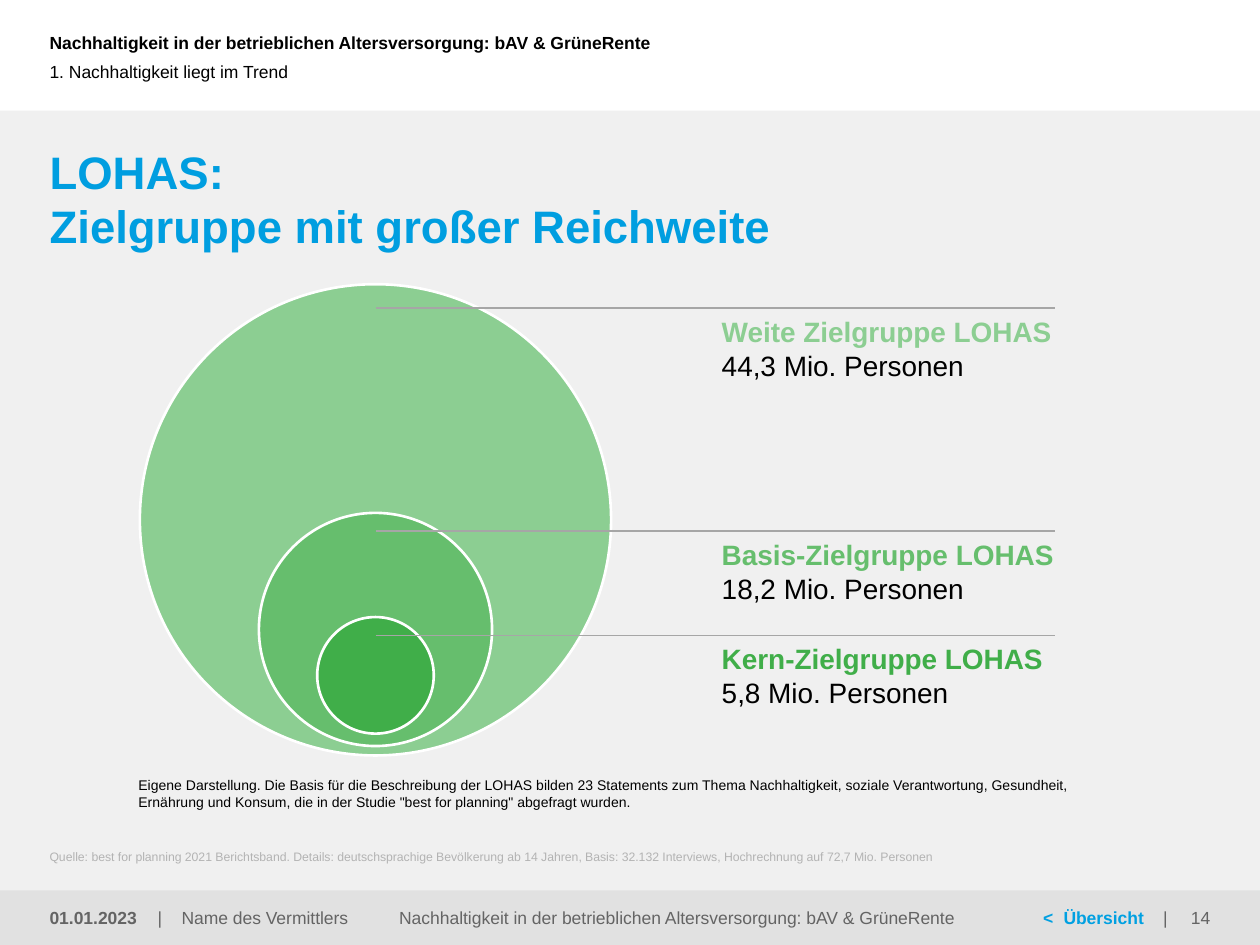
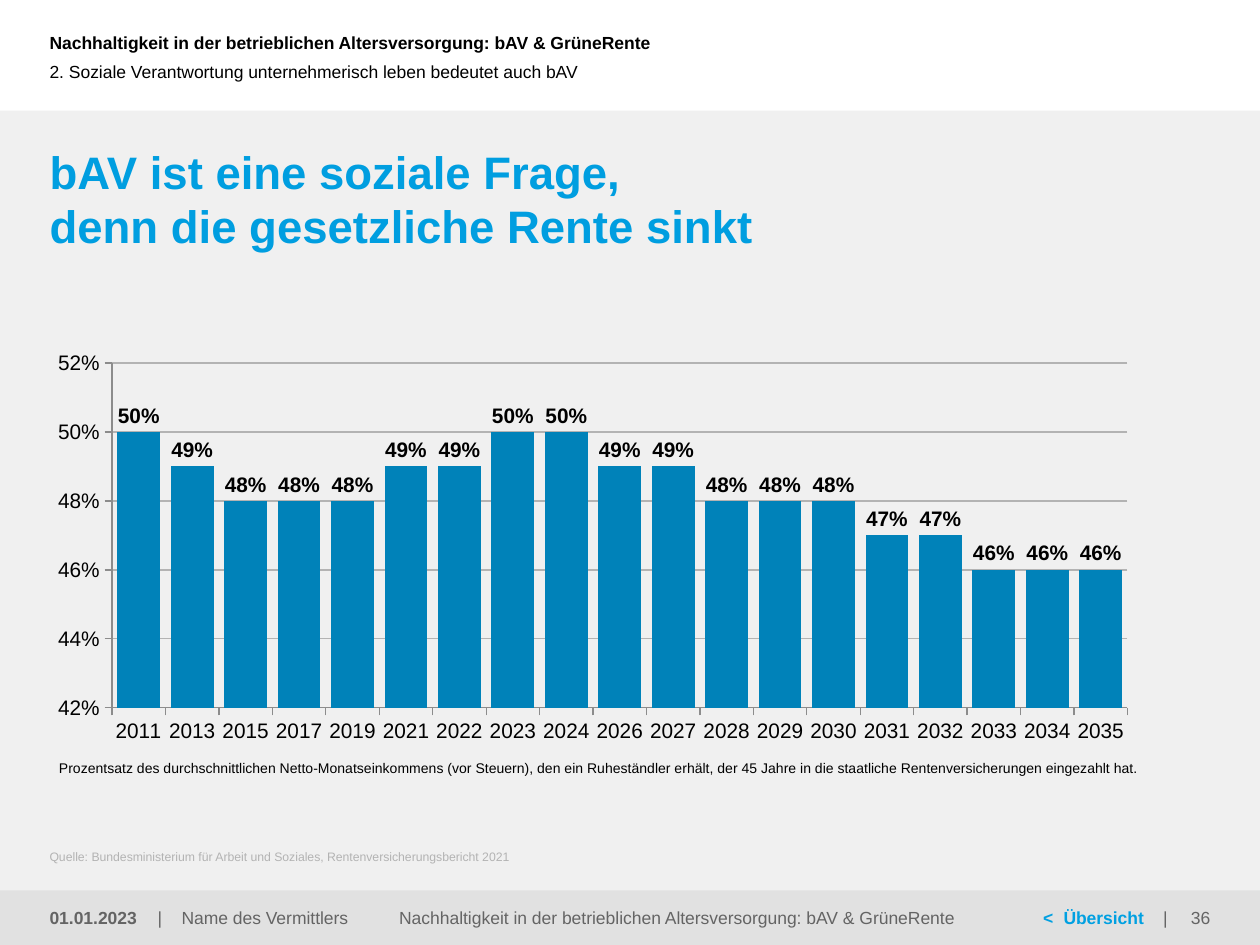
"""Builds two slides on sustainability in occupational pensions: LOHAS circles and pension level chart."""
from lxml.etree import SubElement
from pptx import Presentation
from pptx.chart.data import CategoryChartData
from pptx.dml.color import RGBColor
from pptx.enum.chart import XL_CHART_TYPE as ChartType, XL_LABEL_POSITION as LabelPos, XL_TICK_MARK as Tick
from pptx.enum.shapes import MSO_CONNECTOR as Connector, MSO_SHAPE as Shape
from pptx.enum.text import MSO_ANCHOR as Anchor, MSO_AUTO_SIZE as AutoSize, PP_ALIGN as Align
from pptx.oxml import parse_xml
from pptx.oxml.ns import nsdecls, qn
from pptx.util import Cm, Pt

FONT = "Arial"
BLACK = RGBColor(0x00, 0x00, 0x00)
WHITE = RGBColor(0xFF, 0xFF, 0xFF)
PANEL = RGBColor(0xF0, 0xF0, 0xF0)
FOOTER_BAND = RGBColor(0xE1, 0xE1, 0xE1)
FOOTER_GREY = RGBColor(0x64, 0x64, 0x64)
SOURCE_GREY = RGBColor(0xB3, 0xB3, 0xB3)
LEADER_GREY = RGBColor(0xA6, 0xA6, 0xA6)
AXIS_GREY = RGBColor(0x8C, 0x8C, 0x8C)
TITLE_BLUE = RGBColor(0x00, 0x9E, 0xE0)
LINK_BLUE = RGBColor(0x00, 0xA0, 0xE1)
BAR_BLUE = RGBColor(0x00, 0x82, 0xB9)
LIGHT_GREEN = RGBColor(0x8C, 0xCE, 0x92)
MID_GREEN = RGBColor(0x66, 0xBE, 0x6D)
DARK_GREEN = RGBColor(0x40, 0xAE, 0x49)

WIDTH, HEIGHT = 25.4, 19.05
MARGIN = 1
HEADER_H = 2.23
FOOTER_TOP, FOOTER_H = 17.95, 1.1
DECK = "Nachhaltigkeit in der betrieblichen Altersversorgung: bAV & GrüneRente"


def add_text(slide, box, text, size, color, bold=False, align=Align.LEFT,
             anchor=Anchor.MIDDLE, insets=(0, 0, 0, 0), tabs=()):
    """Add a text box with uniform formatting and return its text frame."""
    frame = slide.shapes.add_textbox(*map(Cm, box)).text_frame
    frame.word_wrap = True
    frame.vertical_anchor = anchor
    frame.margin_left, frame.margin_top, frame.margin_right, frame.margin_bottom = map(Cm, insets)
    frame.text = text
    for paragraph in frame.paragraphs:
        paragraph.alignment = align
        if tabs:
            stops = SubElement(paragraph._p.get_or_add_pPr(), qn("a:tabLst"))
            for stop in tabs:
                SubElement(stops, qn("a:tab"), pos=str(Cm(stop)), algn="l")
        font = paragraph.font
        font.name, font.size, font.bold = FONT, Pt(size), bold
        font.color.rgb = color
    return frame


def add_content_slide(title, chapter, source, number):
    """Add a slide with header, title, source line and footer."""
    slide = prs.slides.add_slide(prs.slide_layouts[5])
    heading = slide.shapes.title
    for top, height, color in ((HEADER_H, HEIGHT - HEADER_H, PANEL),
                               (FOOTER_TOP, FOOTER_H, FOOTER_BAND)):
        band = slide.shapes.add_shape(Shape.RECTANGLE, 0, Cm(top), Cm(WIDTH), Cm(height))
        band.shadow.inherit = False
        band.fill.solid()
        band.fill.fore_color.rgb = color
        band.line.fill.background()
        heading._element.addprevious(band._element)

    heading.left, heading.top, heading.width, heading.height = map(Cm, (MARGIN, 2.9, 23.42, 1.4))
    frame = heading.text_frame
    frame.text = title
    frame.auto_size = AutoSize.NONE
    frame.word_wrap = True
    frame.vertical_anchor = Anchor.TOP
    frame.margin_left = frame.margin_top = frame.margin_right = frame.margin_bottom = 0
    line = frame.paragraphs[0]
    line.alignment = Align.LEFT
    line.font.name, line.font.size, line.font.bold = FONT, Pt(26), True
    line.font.color.rgb = TITLE_BLUE

    add_text(slide, (0, 0, 17.73, 1.7), DECK, 10, BLACK, bold=True, insets=(MARGIN, 0.13, 0.25, 0.13))
    add_text(slide, (0, 0.64, 18.16, 1.6), chapter, 10, BLACK, insets=(MARGIN, 0, 0, 0))
    add_text(slide, (MARGIN, 17.12, 23.4, 0.3), source, 7, SOURCE_GREY, anchor=Anchor.BOTTOM)

    add_text(slide, (0, FOOTER_TOP, 3.1, FOOTER_H), "01.01.2023", 10, FOOTER_GREY, bold=True,
             insets=(MARGIN, 0.13, 0, 0.13))
    add_text(slide, (3.18, FOOTER_TOP, 6.15, FOOTER_H), "|\tName des Vermittlers", 10, FOOTER_GREY,
             tabs=(0.48,))
    add_text(slide, (7.54, FOOTER_TOP, 12.2, FOOTER_H), DECK, 10, FOOTER_GREY, align=Align.CENTER)
    overview = add_text(slide, (17.48, FOOTER_TOP, 6.15, FOOTER_H), "<\tÜbersicht", 10, LINK_BLUE,
                        bold=True, insets=(3.55, 0, 0, 0), tabs=(0.41, 2.42))
    divider = overview.paragraphs[0].add_run()
    divider.text = "\t|"
    divider.font.bold = False
    divider.font.color.rgb = FOOTER_GREY
    add_text(slide, (23.01, FOOTER_TOP, 2.39, FOOTER_H), number, 10, FOOTER_GREY, align=Align.RIGHT,
             insets=(0.25, 0.13, MARGIN, 0.13))
    return slide


prs = Presentation()
prs.slide_width, prs.slide_height = Cm(WIDTH), Cm(HEIGHT)

lohas = add_content_slide(
    "LOHAS:\vZielgruppe mit großer Reichweite",
    "1. Nachhaltigkeit liegt im Trend",
    "Quelle: best for planning 2021 Berichtsband. Details: deutschsprachige Bevölkerung ab 14 Jahren, "
    "Basis: 32.132 Interviews, Hochrechnung auf 72,7 Mio. Personen",
    "14",
)
add_text(lohas, (2.79, 15.65, 19.02, 0.69),
         "Eigene Darstellung. Die Basis für die Beschreibung der LOHAS bilden 23 Statements zum Thema "
         "Nachhaltigkeit, soziale Verantwortung, Gesundheit, Ernährung und Konsum, die in der Studie "
         "\"best for planning\" abgefragt wurden.", 8, BLACK, anchor=Anchor.BOTTOM)

CENTER_X, LEADER_END = 7.57, 21.27
target_groups = (
    ("Weite Zielgruppe LOHAS", "44,3 Mio. Personen", LIGHT_GREEN, 5.73, 9.5, 6.21),
    ("Basis-Zielgruppe LOHAS", "18,2 Mio. Personen", MID_GREEN, 10.34, 4.7, 10.71),
    ("Kern-Zielgruppe LOHAS", "5,8 Mio. Personen", DARK_GREEN, 12.44, 2.35, 12.81),
)
for name, persons, color, top, diameter, leader_y in target_groups:
    circle = lohas.shapes.add_shape(Shape.OVAL, Cm(CENTER_X - diameter / 2), Cm(top),
                                    Cm(diameter), Cm(diameter))
    circle.shadow.inherit = False
    circle.fill.solid()
    circle.fill.fore_color.rgb = color
    circle.line.color.rgb = WHITE
    circle.line.width = Pt(1.5)

for name, persons, color, top, diameter, leader_y in target_groups:
    leader = lohas.shapes.add_connector(Connector.STRAIGHT, Cm(CENTER_X), Cm(leader_y),
                                        Cm(LEADER_END), Cm(leader_y))
    leader.line.color.rgb = LEADER_GREY
    leader.line.width = Pt(1)
    SubElement(leader._element.spPr, qn("a:effectLst"))
    label = add_text(lohas, (14.3, leader_y, 8.28, 1.63), f"{name}\n{persons}", 16, BLACK,
                     anchor=Anchor.TOP, insets=(0.25, 0.13, 0.25, 0.13))
    label.paragraphs[0].font.bold = True
    label.paragraphs[0].font.color.rgb = color

pension = add_content_slide(
    "bAV ist eine soziale Frage,\vdenn die gesetzliche Rente sinkt",
    "2. Soziale Verantwortung unternehmerisch leben bedeutet auch bAV",
    "Quelle: Bundesministerium für Arbeit und Soziales, Rentenversicherungsbericht 2021",
    "36",
)
pension_levels = {
    "2011": 0.50, "2013": 0.49, "2015": 0.48, "2017": 0.48, "2019": 0.48, "2021": 0.49, "2022": 0.49,
    "2023": 0.50, "2024": 0.50, "2026": 0.49, "2027": 0.49, "2028": 0.48, "2029": 0.48, "2030": 0.48,
    "2031": 0.47, "2032": 0.47, "2033": 0.46, "2034": 0.46, "2035": 0.46,
}
level_data = CategoryChartData(number_format="0%")
level_data.categories = list(pension_levels)
level_data.add_series("Series 1", list(pension_levels.values()))
chart = pension.shapes.add_chart(ChartType.COLUMN_CLUSTERED, Cm(1.17), Cm(6.91), Cm(22.45), Cm(8.18),
                                 level_data).chart
chart.has_title = False
chart.has_legend = False
chart.font.name, chart.font.size = FONT, Pt(12)
chart.font.color.rgb = BLACK

years, percent = chart.category_axis, chart.value_axis
for axis in (years, percent):
    axis.major_tick_mark = Tick.OUTSIDE
    axis.minor_tick_mark = Tick.NONE
    axis.format.line.color.rgb = AXIS_GREY
    axis.format.line.width = Pt(0.75)
years.has_major_gridlines = False
percent.minimum_scale, percent.maximum_scale, percent.major_unit = 0.42, 0.52, 0.02
percent.tick_labels.number_format = "0%"
percent.tick_labels.number_format_is_linked = False
percent.has_major_gridlines = True
percent.major_gridlines.format.line.color.rgb = SOURCE_GREY
percent.major_gridlines.format.line.width = Pt(0.75)

columns = chart.plots[0]
columns.gap_width = 25
columns.vary_by_categories = False
bars = columns.series[0]
bars.format.fill.solid()
bars.format.fill.fore_color.rgb = BAR_BLUE
bar_labels = bars.data_labels
bar_labels.show_value = True
bar_labels.position = LabelPos.OUTSIDE_END
bar_labels.number_format = "0%"
bar_labels.number_format_is_linked = False
bar_labels.font.name, bar_labels.font.size, bar_labels.font.bold = FONT, Pt(12), True
bar_labels.font.color.rgb = BLACK

plot_area = chart._chartSpace.chart.plotArea
for automatic_layout in plot_area.findall(qn("c:layout")):
    plot_area.remove(automatic_layout)
plot_area.insert(0, parse_xml(
    f'<c:layout {nsdecls("c")}><c:manualLayout><c:layoutTarget val="inner"/>'
    '<c:xMode val="edge"/><c:yMode val="edge"/><c:x val="0.04"/><c:y val="0.05"/>'
    '<c:w val="0.92"/><c:h val="0.85"/></c:manualLayout></c:layout>'))

add_text(pension, (1.19, 15.32, 23.01, 0.33),
         "Prozentsatz des durchschnittlichen Netto-Monatseinkommens (vor Steuern), den ein Ruheständler "
         "erhält, der 45 Jahre in die staatliche Rentenversicherungen eingezahlt hat.",
         8, BLACK, anchor=Anchor.BOTTOM)

prs.save("out.pptx")
